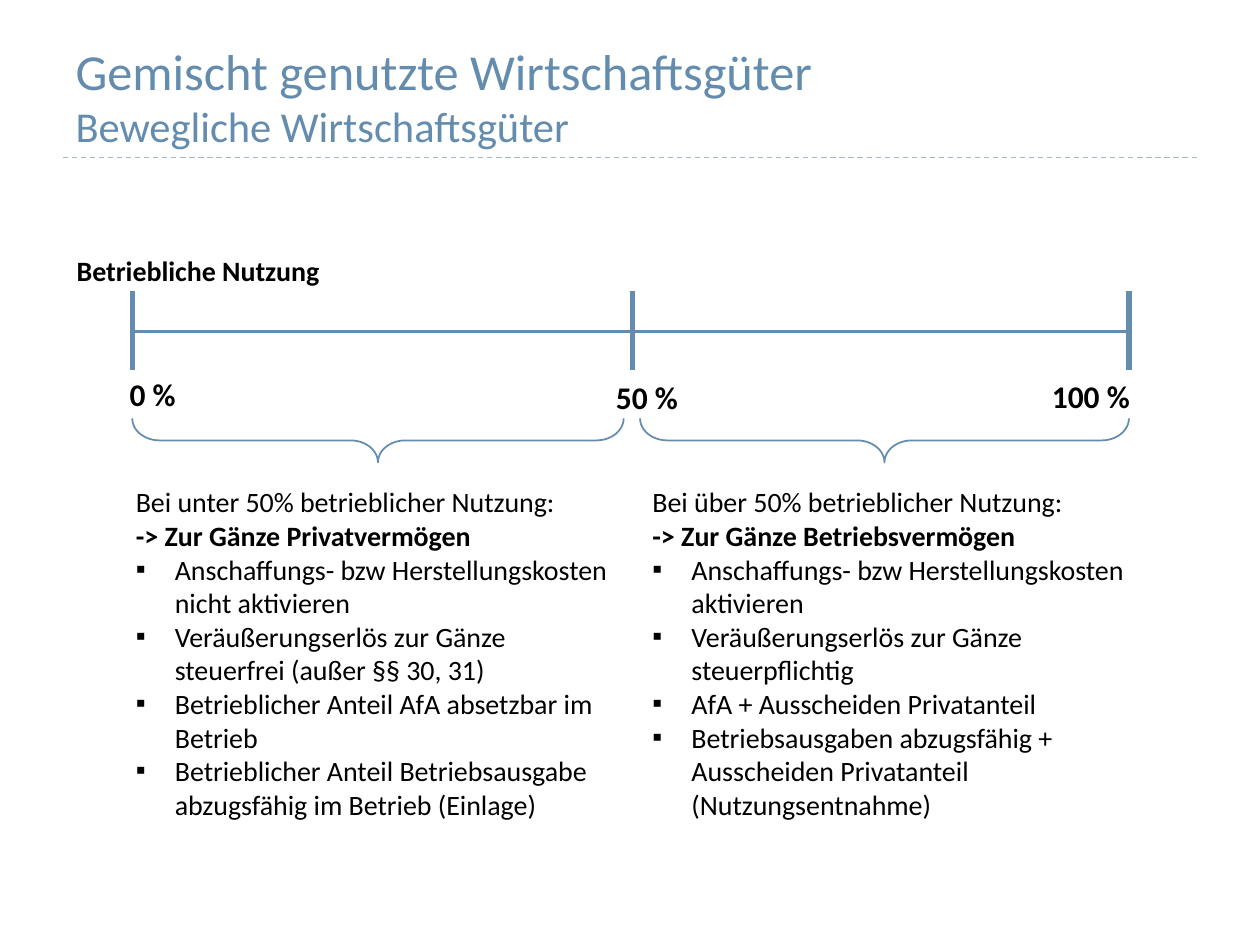
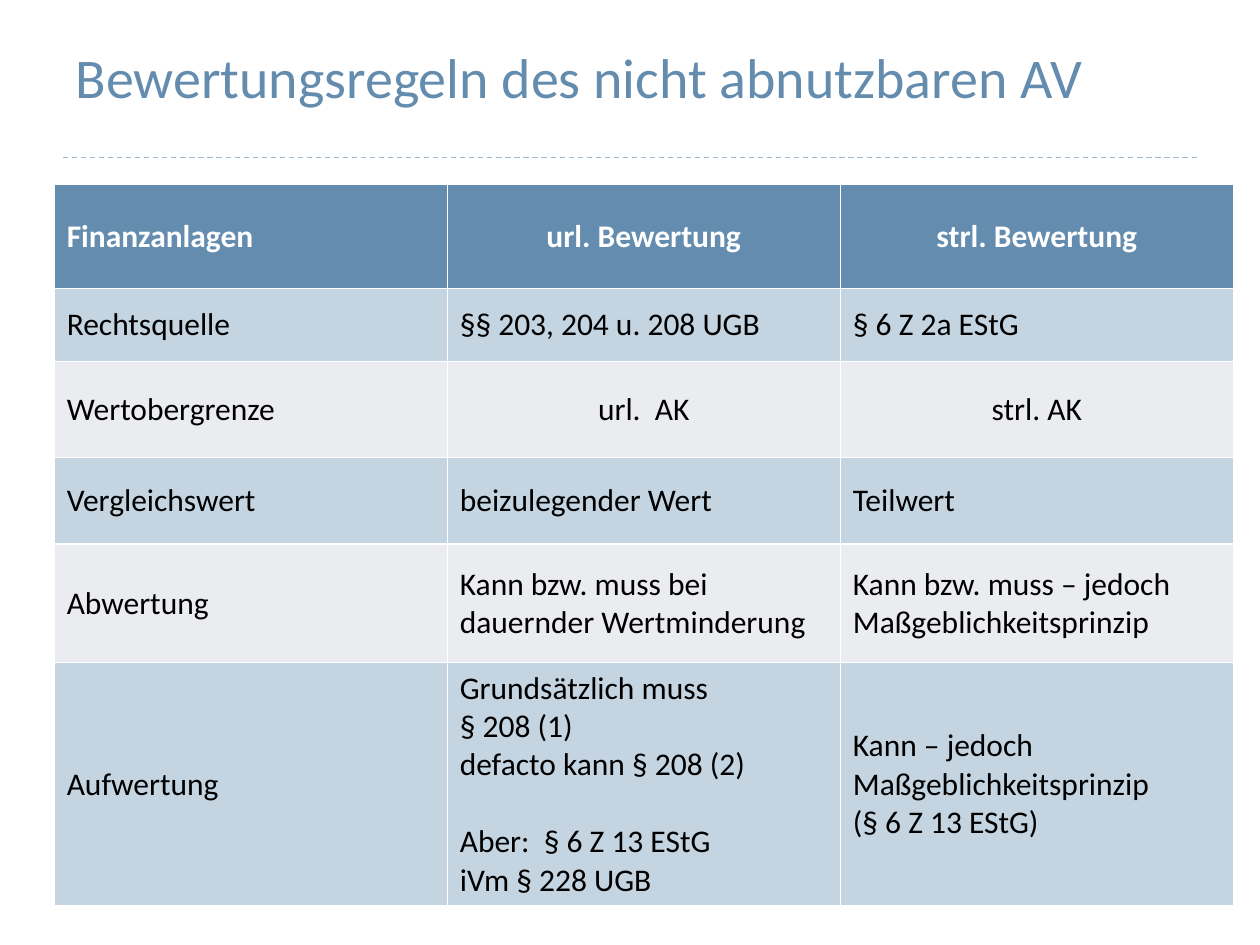
from lxml import etree
from pptx import Presentation
from pptx.dml.color import RGBColor
from pptx.enum.dml import MSO_LINE
from pptx.enum.shapes import MSO_CONNECTOR, MSO_SHAPE
from pptx.enum.text import MSO_ANCHOR, MSO_AUTO_SIZE, PP_ALIGN
from pptx.oxml.ns import qn
from pptx.util import Inches, Pt

STRAIGHT = MSO_CONNECTOR.STRAIGHT
DASH = MSO_LINE.DASH
LEFT_BRACE = MSO_SHAPE.LEFT_BRACE
BOTTOM, MIDDLE = MSO_ANCHOR.BOTTOM, MSO_ANCHOR.MIDDLE
LEFT, CENTER = PP_ALIGN.LEFT, PP_ALIGN.CENTER
NO_AUTOFIT = MSO_AUTO_SIZE.NONE
TITLE_ONLY = 5

FONT = "Calibri"
COLORS = {
    "accent": "638CAE",
    "rule": "9FB8CD",
    "text": "000000",
    "white": "FFFFFF",
    "band_dark": "C5D4E1",
    "band_light": "EBECF0",
}


def color(name):
    return RGBColor.from_string(COLORS[name])


class Deck:
    def __init__(self):
        self.presentation = Presentation()
        self.presentation.slide_width = Inches(10)
        self.presentation.slide_height = Inches(7.5)
        self.slide = None

    def add_slide(self, title_lines, top, height):
        """Start a slide; title_lines holds (text, size) pairs."""
        layout = self.presentation.slide_layouts[TITLE_ONLY]
        self.slide = self.presentation.slides.add_slide(layout)
        self.line(0.5, 1.25, 9.5, 1.25, 0.75, "rule").line.dash_style = DASH
        title = self.slide.shapes.title
        title.left, title.top = Inches(0.5), Inches(top)
        title.width, title.height = Inches(9), Inches(height)
        text_frame = title.text_frame
        text_frame.auto_size = NO_AUTOFIT
        text_frame.vertical_anchor = BOTTOM
        text_frame.text = "\v".join(text for text, _ in title_lines)
        paragraph = text_frame.paragraphs[0]
        paragraph.alignment = LEFT
        for run, (_, size) in zip(paragraph.runs, title_lines):
            self.format_font(run.font, size, "accent")
        # A line break has its own size, which sets the height of its line.
        for line_break, (_, size) in zip(paragraph._p.findall(qn("a:br")), title_lines):
            etree.SubElement(line_break, qn("a:rPr"), sz=str(round(size * 100)))

    def format_font(self, font, size, color_name="text", bold=False):
        font.name, font.size, font.bold = FONT, Pt(size), bold
        font.color.rgb = color(color_name)

    def line(self, x1, y1, x2, y2, width, color_name="accent"):
        connector = self.slide.shapes.add_connector(
            STRAIGHT, Inches(x1), Inches(y1), Inches(x2), Inches(y2))
        connector.line.width = Pt(width)
        connector.line.color.rgb = color(color_name)
        etree.SubElement(connector._element.spPr, qn("a:effectLst"))
        return connector

    def brace_below(self, left, right, top, depth):
        """Draw a horizontal brace whose point faces down."""
        span = right - left
        shape = self.slide.shapes.add_shape(
            LEFT_BRACE, Inches((left + right - depth) / 2),
            Inches(top + (depth - span) / 2), Inches(depth), Inches(span))
        shape.rotation = 270
        shape.adjustments[0] = 0.618
        shape.fill.background()
        shape.line.color.rgb = color("accent")
        shape.line.width = Pt(1)
        shape.shadow.inherit = False

    def text_box(self, left, top, width, height, lines, size, bold_lines=(), first_bullet=None):
        """Lines from index first_bullet onward get a square bullet."""
        box = self.slide.shapes.add_textbox(
            Inches(left), Inches(top), Inches(width), Inches(height))
        text_frame = box.text_frame
        text_frame.word_wrap = True
        text_frame.text = "\n".join(lines)
        for index, paragraph in enumerate(text_frame.paragraphs):
            for run in paragraph.runs:
                self.format_font(run.font, size, bold=index in bold_lines)
            if first_bullet is not None and index >= first_bullet:
                self.bullet(paragraph)

    def bullet(self, paragraph):
        properties = paragraph._p.get_or_add_pPr()
        indent = Inches(0.31)
        properties.set("marL", str(indent))
        properties.set("indent", str(-indent))
        etree.SubElement(properties, qn("a:buFont"), typeface="Wingdings")
        properties[-1].set("typeface", "Arial")
        etree.SubElement(properties, qn("a:buChar"), char="▪")

    def table(self, left, top, column_width, row_heights, rows, centered_rows):
        """Rows in centered_rows are centred from the second column on."""
        column_count = len(rows[0])
        table = self.slide.shapes.add_table(
            len(rows), column_count, Inches(left), Inches(top),
            Inches(column_width * column_count), Inches(sum(row_heights))).table
        for column in table.columns:
            column.width = Inches(column_width)
        for row_index, (row, height) in enumerate(zip(rows, row_heights)):
            table.rows[row_index].height = Inches(height)
            is_header = row_index == 0
            band = "band_dark" if row_index % 2 else "band_light"
            for column_index, text in enumerate(row):
                cell = table.cell(row_index, column_index)
                cell.fill.solid()
                cell.fill.fore_color.rgb = color("accent" if is_header else band)
                cell.vertical_anchor = MIDDLE
                cell.text_frame.text = text
                centered = column_index > 0 and row_index in centered_rows
                for paragraph in cell.text_frame.paragraphs:
                    paragraph.alignment = CENTER if centered else LEFT
                    for run in paragraph.runs:
                        self.format_font(
                            run.font, 18, "white" if is_header else "text", is_header)
        return table


def add_usage_slide(deck):
    deck.add_slide([("Gemischt genutzte Wirtschaftsgüter", 28.8),
                    ("Bewegliche Wirtschaftsgüter", 24.3)], 0.25, 1)
    scale_start, scale_middle, scale_end = ticks = (1.05, 5.02, 8.96)
    deck.line(scale_start, 2.63, scale_end, 2.63, 2)
    for tick in ticks:
        deck.line(tick, 2.31, tick, 2.94, 3)
    deck.brace_below(scale_start, scale_middle - 0.07, 3.32, 0.35)
    deck.brace_below(scale_middle + 0.06, scale_end, 3.32, 0.35)
    for left, top, width, label in [(0.93, 2.93, 0.71, "0 %"),
                                    (4.79, 2.95, 0.84, "50 %"),
                                    (8.25, 2.94, 0.87, "100 %")]:
        deck.text_box(left, top, width, 0.4, [label], 18, bold_lines=(0,))

    private_lines = [
        "Bei unter 50% betrieblicher Nutzung:",
        "-> Zur Gänze Privatvermögen",
        "Anschaffungs- bzw Herstellungskosten nicht aktivieren",
        "Veräußerungserlös zur Gänze steuerfrei (außer §§ 30, 31)",
        "Betrieblicher Anteil AfA absetzbar im Betrieb",
        "Betrieblicher Anteil Betriebsausgabe abzugsfähig im Betrieb (Einlage)",
    ]
    business_lines = [
        "Bei über 50% betrieblicher Nutzung:",
        "-> Zur Gänze Betriebsvermögen",
        "Anschaffungs- bzw Herstellungskosten aktivieren",
        "Veräußerungserlös zur Gänze steuerpflichtig",
        "AfA + Ausscheiden Privatanteil",
        "Betriebsausgaben abzugsfähig + Ausscheiden Privatanteil (Nutzungsentnahme)",
    ]
    for left, lines in [(0.98, private_lines), (5.08, business_lines)]:
        deck.text_box(left, 3.8, 3.97, 3.1, lines, 16, bold_lines=(1,), first_bullet=2)
    deck.text_box(0.51, 1.96, 4.49, 0.37, ["Betriebliche Nutzung"], 16, bold_lines=(0,))


def add_valuation_slide(deck):
    deck.add_slide([("Bewertungsregeln des nicht abnutzbaren AV", 32)], 0, 0.92)
    rows = [
        ("Finanzanlagen", "url. Bewertung", "strl. Bewertung"),
        ("Rechtsquelle", "§§ 203, 204 u. 208 UGB", "§ 6 Z 2a EStG"),
        ("Wertobergrenze", "url.  AK", "strl. AK"),
        ("Vergleichswert", "beizulegender Wert", "Teilwert"),
        ("Abwertung", "Kann bzw. muss bei dauernder Wertminderung",
         "Kann bzw. muss – jedoch\nMaßgeblichkeitsprinzip"),
        ("Aufwertung",
         "Grundsätzlich muss\n§ 208 (1)\ndefacto kann § 208 (2)\n"
         "Aber:  § 6 Z 13 EStG\niVm § 228 UGB",
         "Kann – jedoch Maßgeblichkeitsprinzip\n(§ 6 Z 13 EStG)"),
    ]
    table = deck.table(0.43, 1.46, 3.12, [0.83, 0.58, 0.76, 0.69, 0.94, 1.89],
                       rows, centered_rows=(0, 2))
    exception = table.cell(5, 1).text_frame.paragraphs[3]
    exception.space_before = Pt(22)


def main():
    deck = Deck()
    add_usage_slide(deck)
    add_valuation_slide(deck)
    deck.presentation.save("out.pptx")


if __name__ == "__main__":
    main()
